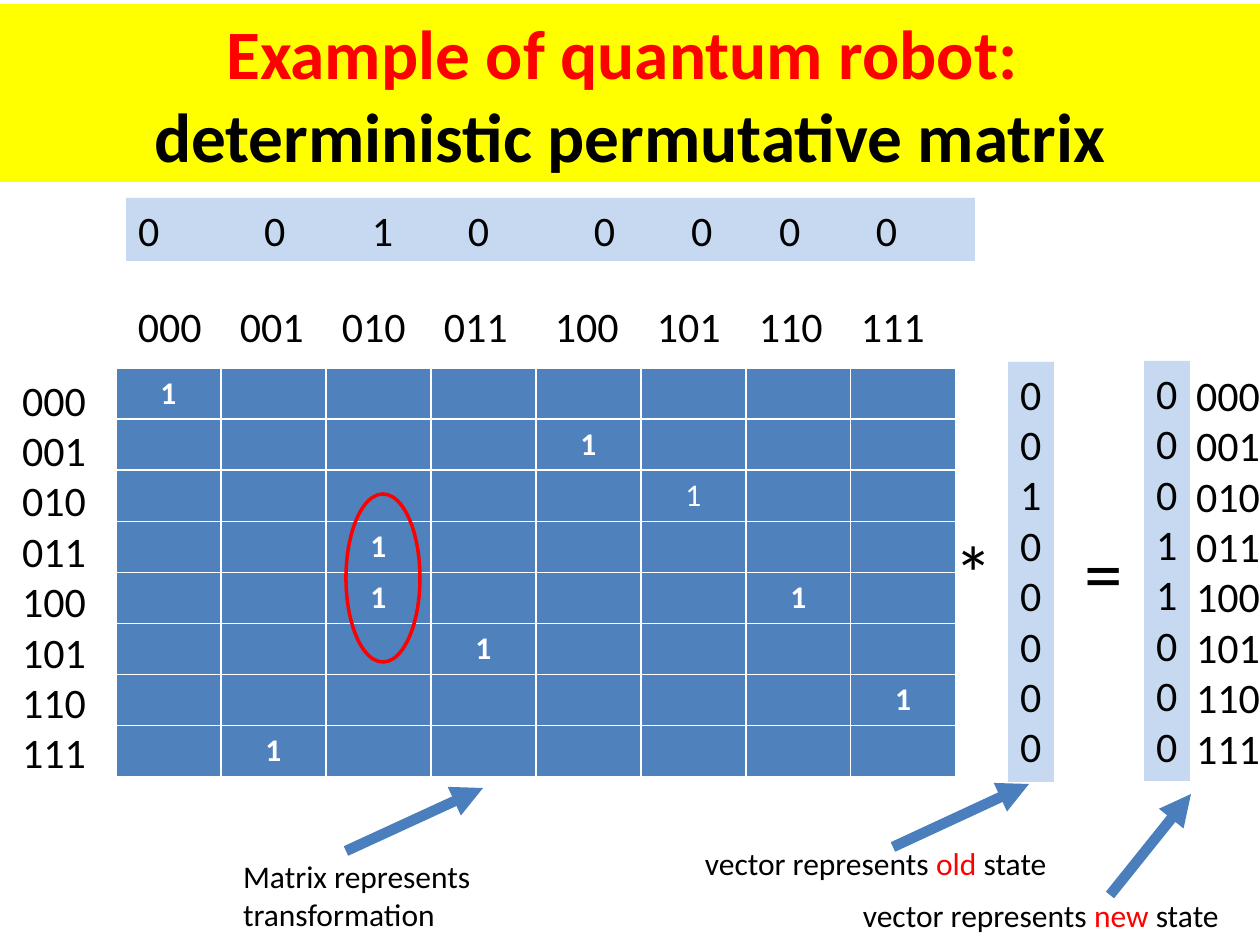
from lxml import etree
from pptx import Presentation
from pptx.dml.color import RGBColor
from pptx.enum.shapes import MSO_CONNECTOR, MSO_SHAPE
from pptx.enum.text import MSO_ANCHOR, MSO_AUTO_SIZE, PP_ALIGN
from pptx.oxml.ns import qn
from pptx.util import Pt

RECT, OVAL = MSO_SHAPE.RECTANGLE, MSO_SHAPE.OVAL
STRAIGHT = MSO_CONNECTOR.STRAIGHT
CENTER, MIDDLE = PP_ALIGN.CENTER, MSO_ANCHOR.MIDDLE
NO_FIT = MSO_AUTO_SIZE.NONE

FONT = "Calibri"
SCALE = 914400 / 126  # EMU in one px
COLORS = {"black": "000000", "white": "FFFFFF", "red": "FF0000", "yellow": "FFFF00",
          "cell": "4F81BD", "vector": "C6D9F1", "arrow": "4B7EBC"}

# Content
TITLE = [("Example of quantum robot: ", "red"), ("deterministic permutative matrix", "black")]
N = 8
STATES = [f"{i:03b}" for i in range(N)]
INPUT_ROW = "00100000"
OLD_STATE = "00100000"
NEW_STATE = "00011000"
ONES = [(0, 0), (1, 4), (2, 5), (3, 2), (4, 2), (4, 6), (5, 3), (6, 7), (7, 1)]
PLAIN_ONE = (2, 5)

# Layout in px: left, top, width, height
MATRIX = (116, 368, 105 * N, 51 * N)
INPUT_TABS = [126, 234, 330, 456, 553, 641, 738]
HEADER_TABS = [102, 204, 306, 417, 519, 621, 723]
COLUMNS = [  # lines, box, fill
    (STATES, (10, 368, 105, 420), None),
    (OLD_STATE, (1008, 362, 46, 420), "vector"),
    (NEW_STATE, (1144, 361, 46, 420), "vector"),
    (STATES, (1184, 363, 105, 420), None),
]
OPERATORS = [("*", (955, 518, 40, 106)), ("=", (1085, 518, 40, 106))]
NOTES = [
    ([("Matrix represents transformation", "black")], (231, 851, 336, 89)),
    ([("vector represents ", "black"), ("old", "red"), (" state", "black")],
     (693, 838, 406, 50)),
    ([("vector represents ", "black"), ("new", "red"), (" state", "black")],
     (851, 890, 406, 50)),
]
ARROWS = [(346, 851, 483, 788), (893, 847, 1029, 784), (1110, 895, 1191, 794)]
HIGHLIGHT = (346, 494, 74, 168)


def px(*values):
    return [round(v * SCALE) for v in values]


def rgb(name):
    return RGBColor.from_string(COLORS[name])


def style(r, size, color="black", bold=False):
    r.font.name, r.font.size, r.font.bold = FONT, Pt(size), bold
    r.font.color.rgb = rgb(color)


def add_text(lines, box, size, fill=None, inset=12):
    """Each line is a list of (text, color) runs."""
    if fill:
        sp = slide.shapes.add_shape(RECT, *px(*box))
        sp.shadow.inherit = False
        sp.fill.solid()
        sp.fill.fore_color.rgb = rgb(fill)
        sp.line.fill.background()
    else:
        sp = slide.shapes.add_textbox(*px(*box))
    tf = sp.text_frame
    tf.word_wrap = True
    tf.vertical_anchor = MSO_ANCHOR.TOP
    tf.margin_left, tf.margin_right = px(inset, 0)
    for i, runs in enumerate(lines):
        p = tf.add_paragraph() if i else tf.paragraphs[0]
        p.alignment = PP_ALIGN.LEFT
        for text, color in runs:
            r = p.add_run()
            r.text = text
            style(r, size, color)
    return sp


def add_tabbed(items, tabs, box, fill=None):
    sp = add_text([[("\t".join(items), "black")]], box, 24, fill)
    pPr = sp.text_frame.paragraphs[0]._p.get_or_add_pPr()
    tab_list = etree.SubElement(pPr, qn("a:tabLst"))
    for pos in px(*tabs):
        etree.SubElement(tab_list, qn("a:tab"), pos=str(pos), algn="l")


prs = Presentation()
prs.slide_width, prs.slide_height = px(1260, 945)
slide = prs.slides.add_slide(prs.slide_layouts[5])

# Title
title = slide.shapes.title
title.left, title.top, title.width, title.height = px(0, 4, 1260, 178)
title.fill.solid()
title.fill.fore_color.rgb = rgb("yellow")
tf = title.text_frame
tf.auto_size, tf.vertical_anchor = NO_FIT, MIDDLE
p = tf.paragraphs[0]
p.text = "\v".join(text for text, color in TITLE)
p.alignment = CENTER
for r, (text, color) in zip(p.runs, TITLE):
    style(r, 39.6, color, True)

# Permutation matrix
table = slide.shapes.add_table(N, N, *px(*MATRIX)).table
for row in range(N):
    for col in range(N):
        cell = table.cell(row, col)
        cell.fill.solid()
        cell.fill.fore_color.rgb = rgb("cell")
        if (row, col) in ONES:
            cell.text = "1"
            p = cell.text_frame.paragraphs[0]
            p.alignment = CENTER
            style(p.runs[0], 18, "white", (row, col) != PLAIN_ONE)

# State labels and vectors
add_tabbed(STATES, HEADER_TABS, (126, 294, 905, 63))
add_tabbed(INPUT_ROW, INPUT_TABS, (126, 198, 849, 63), "vector")
for lines, box, fill in COLUMNS:
    add_text([[(line, "black")] for line in lines], box, 24, fill)
for sign, box in OPERATORS:
    add_text([[(sign, "black")]], box, 44, inset=0)

# Notes and their arrows
for runs, box in NOTES:
    add_text([runs], box, 18)
for ends in ARROWS:
    arrow = slide.shapes.add_connector(STRAIGHT, *px(*ends))
    arrow.line.width = Pt(6)
    arrow.line.color.rgb = rgb("arrow")
    etree.SubElement(arrow.line._get_or_add_ln(), qn("a:tailEnd"), type="triangle")
    etree.SubElement(arrow._element.spPr, qn("a:effectLst"))

# Highlighted column entries
oval = slide.shapes.add_shape(OVAL, *px(*HIGHLIGHT))
oval.shadow.inherit = False
oval.fill.background()
oval.line.color.rgb = rgb("red")
oval.line.width = Pt(2)

prs.save("out.pptx")
